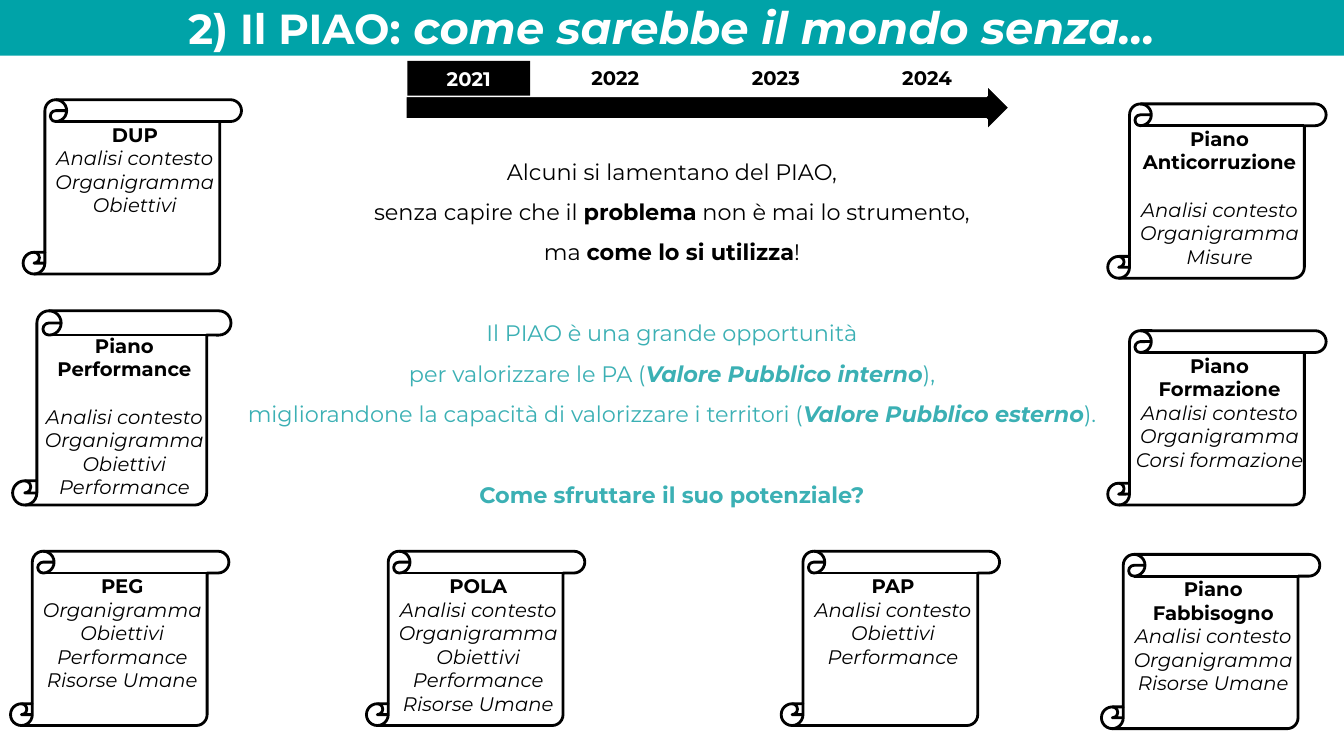
import pptx
import pptx.dml.color
import pptx.enum.shapes
import pptx.enum.text
import pptx.util

PX = 9525  # EMU per px, 96 px to the inch
FONT = "Montserrat"
BLACK = pptx.dml.color.RGBColor(0x00, 0x00, 0x00)
WHITE = pptx.dml.color.RGBColor(0xFF, 0xFF, 0xFF)
TEAL = pptx.dml.color.RGBColor(0x00, 0xA3, 0xA8)
LIGHT_TEAL = pptx.dml.color.RGBColor(0x3B, 0xB0, 0xB4)
SHAPES = pptx.enum.shapes.MSO_SHAPE

SCROLL_WIDTH = 208
SCROLL_HEIGHT = 166

# left, top, height, heading lines, gap after heading in points, contents
SCROLLS = [
    (1055, 99, SCROLL_HEIGHT, ["Piano Anticorruzione"], 17,
     ["Analisi contesto", "Organigramma", "Misure"]),
    (12, 296, 185, ["Piano Performance"], 17,
     ["Analisi contesto", "Organigramma", "Obiettivi", "Performance"]),
    (10, 525, SCROLL_HEIGHT, ["PEG"], 0,
     ["Organigramma", "Obiettivi", "Performance", "Risorse Umane"]),
    (1055, 315, SCROLL_HEIGHT, ["Piano Formazione"], 0,
     ["Analisi contesto", "Organigramma", "Corsi formazione"]),
    (22, 95, SCROLL_HEIGHT, ["DUP"], 0,
     ["Analisi contesto", "Organigramma", "Obiettivi"]),
    (349, 525, SCROLL_HEIGHT, ["POLA"], 0,
     ["Analisi contesto", "Organigramma", "Obiettivi", "Performance", "Risorse Umane"]),
    (1049, 528, SCROLL_HEIGHT, ["Piano", "Fabbisogno"], 0,
     ["Analisi contesto", "Organigramma", "Risorse Umane"]),
    (744, 525, SCROLL_HEIGHT, ["PAP"], 0,
     ["Analisi contesto", "Obiettivi", "Performance"]),
]

YEARS = [("2022", 532), ("2023", 685), ("2024", 829)]

# colour, space before in points, runs as (text, bold, italic)
MESSAGE = [
    (BLACK, 0, [("Alcuni si lamentano del PIAO,", False, False)]),
    (BLACK, 0, [("senza capire che il ", False, False), ("problema", True, False),
                (" non è mai lo strumento,", False, False)]),
    (BLACK, 0, [("ma ", False, False), ("come lo si utilizza", True, False),
                ("!", False, False)]),
    (LIGHT_TEAL, 29, [("Il PIAO è una grande opportunità", False, False)]),
    (LIGHT_TEAL, 0, [("per valorizzare le PA (", False, False),
                     ("Valore Pubblico interno", True, True), ("),", False, False)]),
    (LIGHT_TEAL, 0, [("migliorandone la capacità di valorizzare i territori (", False, False),
                     ("Valore Pubblico esterno", True, True), (").", False, False)]),
    (LIGHT_TEAL, 29, [("Come sfruttare il suo potenziale?", True, False)]),
]


def box(*lengths):
    return [pptx.util.Emu(length * PX) for length in lengths]


def style(paragraph, size, color, bold=None, italic=None):
    paragraph.alignment = pptx.enum.text.PP_ALIGN.CENTER
    font = paragraph.font
    font.name = FONT
    font.size = pptx.util.Pt(size)
    font.color.rgb = color
    font.bold = bold
    font.italic = italic


def add_runs(paragraph, runs):
    for text, bold, italic in runs:
        run = paragraph.add_run()
        run.text = text
        run.font.bold = bold
        run.font.italic = italic


def add_paragraph(frame):
    """Return the empty first paragraph of the frame, or else a new one."""
    first = frame.paragraphs[0]
    return frame.add_paragraph() if first.runs else first


def add_text_frame(shapes, left, top, width, height):
    frame = shapes.add_textbox(*box(left, top, width, height)).text_frame
    frame.word_wrap = True
    return frame


def add_shape(shapes, kind, bounds, fill=None, line=None):
    shape = shapes.add_shape(kind, *box(*bounds))
    shape.shadow.inherit = False
    if fill is None:
        shape.fill.background()
    else:
        shape.fill.solid()
        shape.fill.fore_color.rgb = fill
    if line is None:
        shape.line.fill.background()
    else:
        shape.line.color.rgb = line
        shape.line.width = pptx.util.Pt(2)
    return shape


def add_title(slide):
    title = slide.shapes.title
    title.left, title.top, title.width, title.height = box(0, -3, 1280, 56)
    title.fill.solid()
    title.fill.fore_color.rgb = TEAL
    frame = title.text_frame
    frame.auto_size = pptx.enum.text.MSO_AUTO_SIZE.NONE
    frame.vertical_anchor = pptx.enum.text.MSO_ANCHOR.MIDDLE
    paragraph = frame.paragraphs[0]
    style(paragraph, 32, WHITE, bold=True)
    add_runs(paragraph, [("2) Il PIAO:", True, False),
                         (" come sarebbe il mondo senza…", True, True)])
    paragraph.runs[0].font.size = pptx.util.Pt(30)


def add_scroll(slide, left, top, height, heading, gap, contents):
    group = slide.shapes.add_group_shape()
    frame = add_text_frame(group.shapes, left + 16, top + 17, 181, height - 20)
    for line in heading:
        paragraph = add_paragraph(frame)
        paragraph.text = line
        style(paragraph, 14, BLACK, bold=True)
    paragraph.space_after = pptx.util.Pt(gap)
    for line in contents:
        paragraph = add_paragraph(frame)
        paragraph.text = line
        style(paragraph, 14, BLACK, italic=True)
    add_shape(group.shapes, SHAPES.VERTICAL_SCROLL,
              (left, top, SCROLL_WIDTH, height), line=BLACK)


def add_year(frame, year, color):
    paragraph = frame.paragraphs[0]
    paragraph.text = year
    style(paragraph, 14, color, bold=True)


def add_timeline(slide):
    add_shape(slide.shapes, SHAPES.RIGHT_ARROW, (386, 80, 576, 45), BLACK, WHITE)
    current = add_shape(slide.shapes, SHAPES.RECTANGLE, (388, 58, 117, 33), BLACK)
    add_year(current.text_frame, "2021", WHITE)
    for year, left in YEARS:
        add_year(add_text_frame(slide.shapes, left, 58, 108, 33), year, BLACK)


def add_message(slide):
    frame = add_text_frame(slide.shapes, 209, 133, 862, 354)
    for color, space_before, runs in MESSAGE:
        paragraph = add_paragraph(frame)
        style(paragraph, 16, color)
        paragraph.line_spacing = 1.5
        paragraph.space_before = pptx.util.Pt(space_before)
        add_runs(paragraph, runs)


def main():
    presentation = pptx.Presentation()
    presentation.slide_width, presentation.slide_height = box(1280, 720)
    slide = presentation.slides.add_slide(presentation.slide_layouts[5])
    add_title(slide)
    for scroll in SCROLLS:
        add_scroll(slide, *scroll)
    add_timeline(slide)
    add_message(slide)
    presentation.save("out.pptx")


if __name__ == "__main__":
    main()
